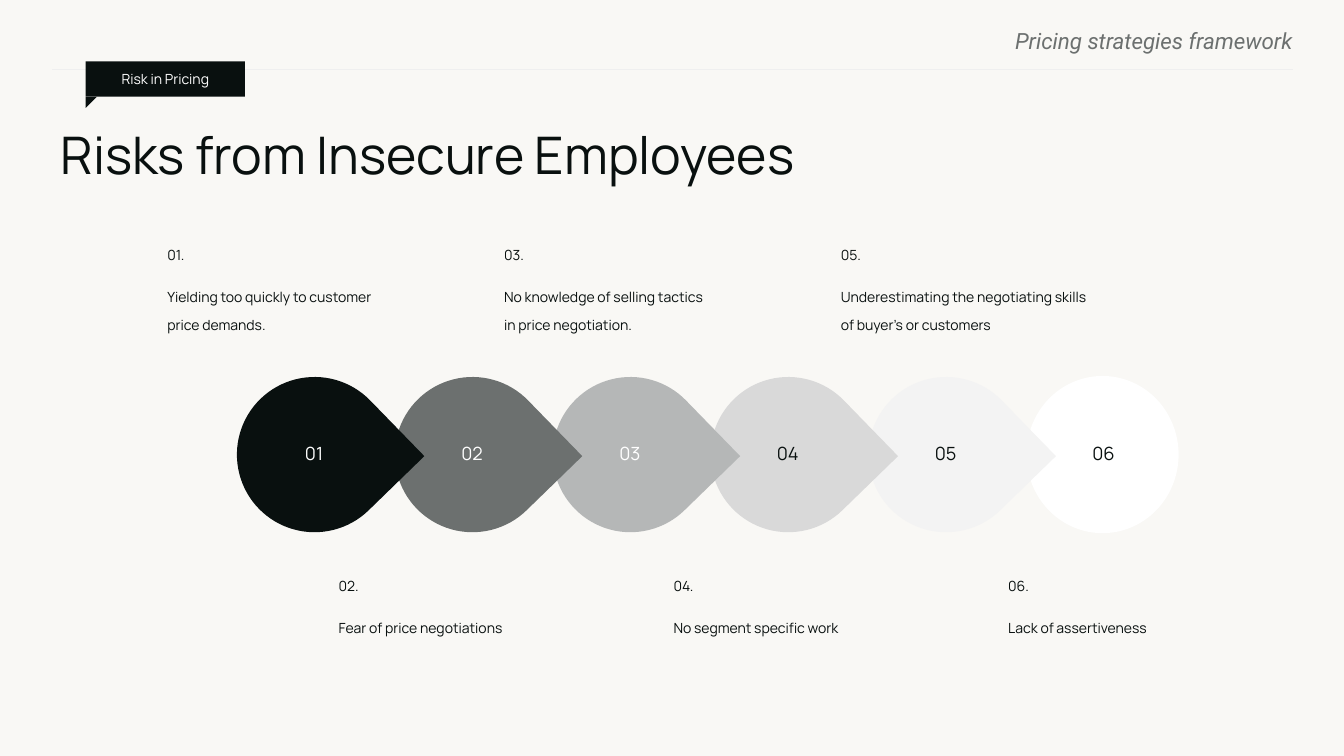
from lxml.etree import SubElement
from pptx import Presentation
from pptx.dml.color import RGBColor
from pptx.enum.shapes import MSO_CONNECTOR, MSO_SHAPE as Preset
from pptx.enum.text import MSO_ANCHOR as Anchor, MSO_AUTO_SIZE as AutoSize, PP_ALIGN as Align
from pptx.oxml.ns import qn
from pptx.util import Inches, Pt

INK, GREY, WHITE = "09100F", "6C706F", "FFFFFF"
PAPER, RULE = "F9F8F5", "EFEFEF"

DROP_FILLS = [INK, GREY, "B5B7B7", "D9D9D9", "F3F3F3"]
DROP_LEFT, DROP_TOP, DROP_SIZE = 2.35, 3.74, 1.54
DROP_PITCH = 7.83 / 5
DROP_TURN = 45.8

# Text and box width of each risk, in numbered order
RISKS = [
    ("Yielding too quickly to customer price demands.", 2.09),
    ("Fear of price negotiations", 2.03),
    ("No knowledge of selling tactics in price negotiation.", 2.09),
    ("No segment specific work", 1.79),
    ("Underestimating the negotiating skills of buyer’s or customers", 2.53),
    ("Lack of assertiveness", 1.84),
]
# Left edge, pitch, top and height of the captions above and below the drops
CAPTION_ROWS = [(1.66, 3.34, 2.33, 0.91), (3.36, 3.32, 5.61, 0.64)]


def color(hex_value):
    return RGBColor.from_string(hex_value)


class SlideBuilder:
    def __init__(self, slide, font="Manrope", ink=INK):
        self.slide = slide
        self.shapes = slide.shapes
        self.font = font
        self.ink = ink

    def background(self, fill):
        self.slide.background.fill.solid()
        self.slide.background.fill.fore_color.rgb = color(fill)

    def frame(self, shape, insets=(0, 0), anchor=Anchor.TOP):
        """Prepare a wrapping text frame with (horizontal, vertical) insets."""
        frame = shape.text_frame
        frame.word_wrap = True
        frame.auto_size = AutoSize.NONE
        frame.vertical_anchor = anchor
        frame.margin_left = frame.margin_right = Inches(insets[0])
        frame.margin_top = frame.margin_bottom = Inches(insets[1])
        return frame

    def add_text(self, paragraph, text, size, fill=None, font=None, italic=False,
                 align=Align.LEFT, spacing=None):
        paragraph.alignment = align
        if spacing:
            paragraph.line_spacing = spacing
        run = paragraph.add_run()
        run.text = text
        run.font.size = Pt(size)
        run.font.name = font or self.font
        run.font.italic = italic
        run.font.color.rgb = color(fill or self.ink)

    def title(self, text, box, size):
        heading = self.shapes.title
        heading.left, heading.top, heading.width, heading.height = map(Inches, box)
        paragraph = self.frame(heading).paragraphs[0]
        paragraph.space_after = Pt(13)
        self.add_text(paragraph, text, size)

    def shape(self, preset, box, fill, rotation=0):
        shape = self.shapes.add_shape(preset, *map(Inches, box))
        shape.shadow.inherit = False
        shape.fill.solid()
        shape.fill.fore_color.rgb = color(fill)
        shape.line.fill.background()
        shape.rotation = rotation
        return shape

    def text_box(self, box, insets=(0, 0), anchor=Anchor.TOP):
        return self.frame(self.shapes.add_textbox(*map(Inches, box)), insets, anchor)

    def rule(self, start, end, fill, width):
        line = self.shapes.add_connector(
            MSO_CONNECTOR.STRAIGHT, *map(Inches, start + end))
        line.line.color.rgb = color(fill)
        line.line.width = Pt(width)
        SubElement(line._element.spPr, qn("a:effectLst"))

    def tag(self, text, box, tail):
        left, top, width, height = box
        banner = self.shape(Preset.RECTANGLE, box, self.ink)
        paragraph = self.frame(banner, (0.1, 0.05), Anchor.MIDDLE).paragraphs[0]
        self.add_text(paragraph, text, 10, WHITE, align=Align.CENTER)
        self.shape(Preset.RIGHT_TRIANGLE, (left, top + height, tail, tail), self.ink, 90)

    def drop_number(self, index, fill):
        box = (DROP_LEFT + 0.26 + index * DROP_PITCH, 3.99, 1.01, 1.04)
        paragraph = self.text_box(box, (0.02, 0.02), Anchor.MIDDLE).paragraphs[0]
        self.add_text(paragraph, f"{index + 1:02}", 13, fill, align=Align.CENTER, spacing=0.9)

    def caption(self, number, text, box):
        frame = self.text_box(box, (0, 0.04))
        self.add_text(frame.paragraphs[0], f"{number:02}.", 10, spacing=1.48)
        detail = frame.add_paragraph()
        detail.space_before = Pt(10)
        self.add_text(detail, text, 10, spacing=1.64)


def main():
    deck = Presentation()
    deck.slide_width, deck.slide_height = Inches(13.33), Inches(7.5)
    page = SlideBuilder(deck.slides.add_slide(deck.slide_layouts[5]))
    page.background(PAPER)

    header = page.text_box((7.68, 0.27, 5.14, 0.24))
    page.add_text(header.paragraphs[0], "Pricing strategies framework", 16, GREY,
                  font="Roboto", italic=True, align=Align.RIGHT)
    page.rule((12.82, 0.69), (0.52, 0.69), RULE, 0.75)
    page.tag("Risk in Pricing", (0.85, 0.61, 1.58, 0.35), 0.11)
    page.title("Risks from Insecure Employees", (0.6, 1.22, 10.01, 0.68), 37)

    # The chain is stacked from right to left so each tip overlaps its neighbour
    last = len(DROP_FILLS)
    page.shape(Preset.OVAL, (DROP_LEFT + last * DROP_PITCH, 3.73, 1.51, 1.56), WHITE)
    page.drop_number(last, INK)
    for index, fill in reversed(list(enumerate(DROP_FILLS))):
        box = (DROP_LEFT + index * DROP_PITCH, DROP_TOP, DROP_SIZE, DROP_SIZE)
        page.shape(Preset.TEAR, box, fill, DROP_TURN)
        page.drop_number(index, WHITE if index < 3 else INK)

    for index, (risk, width) in enumerate(RISKS):
        column, row = divmod(index, 2)
        left, pitch, top, height = CAPTION_ROWS[row]
        page.caption(index + 1, risk, (left + column * pitch, top, width, height))

    deck.save("out.pptx")


if __name__ == "__main__":
    main()
